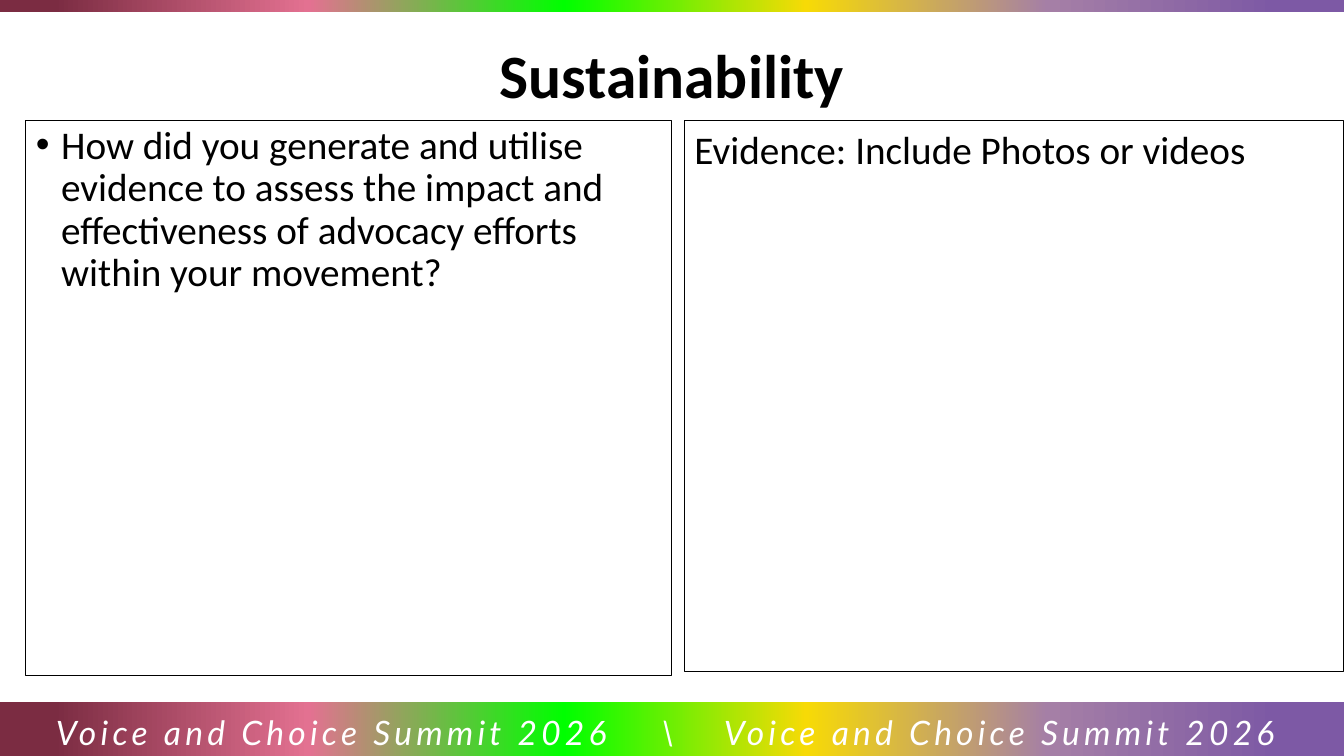
from lxml.etree import SubElement
from pptx import Presentation
from pptx.dml.color import RGBColor
from pptx.enum.shapes import MSO_SHAPE as Preset
from pptx.enum.text import MSO_ANCHOR as Anchor, MSO_AUTO_SIZE as AutoSize, PP_ALIGN as Align
from pptx.oxml.ns import qn
from pptx.util import Pt

SLIDE_W, SLIDE_H = 960, 540
RAINBOW = [(5, "7D59A5"), (22, "A57FA6"), (40, "F7DA06"),
           (58, "00FF00"), (77, "E37191"), (96, "7B2C42")]
SUMMIT = "Voice and Choice Summit 2026"


def color(hex_code):
    return RGBColor.from_string(hex_code)


def place(shape, left, top, width, height):
    shape.left, shape.top = Pt(left), Pt(top)
    shape.width, shape.height = Pt(width), Pt(height)


def add_rectangle(slide, left, top, width, height):
    rectangle = slide.shapes.add_shape(Preset.RECTANGLE, Pt(left), Pt(top), Pt(width), Pt(height))
    rectangle.shadow.inherit = False
    return rectangle


def add_rainbow_band(slide, top, height):
    band = add_rectangle(slide, 0, top, SLIDE_W, height)
    band.line.fill.background()
    band.fill.gradient()
    # Replace the two default stops, then run the colours right to left
    gradient = band.fill._xPr.find(qn("a:gradFill"))
    stops = gradient.find(qn("a:gsLst"))
    for stop in list(stops):
        stops.remove(stop)
    for position, hex_code in RAINBOW:
        stop = SubElement(stops, qn("a:gs"), pos=str(position * 1000))
        SubElement(stop, qn("a:srgbClr"), val=hex_code)
    band.fill.gradient_angle = 180


def outline(panel):
    panel.fill.background()
    panel.line.color.rgb = color("000000")
    panel.line.width = Pt(0.75)


def write(shape, text, size=28, font="Calibri", hex_code="000000", bold=False, italic=False,
          align=Align.LEFT, anchor=Anchor.TOP, line_spacing=1.0, bullet_indent=0,
          letter_spacing=0, tabs=()):
    frame = shape.text_frame
    frame.word_wrap = True
    frame.auto_size = AutoSize.NONE
    frame.vertical_anchor = anchor
    paragraph = frame.paragraphs[0]
    paragraph.text = text
    paragraph.alignment = align
    paragraph.line_spacing = line_spacing
    paragraph.space_before = Pt(0)
    properties = paragraph._p.get_or_add_pPr()
    if bullet_indent:
        properties.set("marL", str(Pt(bullet_indent)))
        properties.set("indent", str(-Pt(bullet_indent)))
        SubElement(properties, qn("a:buFont"), typeface="Arial")
        SubElement(properties, qn("a:buChar"), char="•")
    if tabs:
        tab_list = SubElement(properties, qn("a:tabLst"))
        for position in tabs:
            SubElement(tab_list, qn("a:tab"), pos=str(Pt(position)), algn="l")
    for run in paragraph.runs:
        run.font.size = Pt(size)
        run.font.name = font
        run.font.bold = bold
        run.font.italic = italic
        run.font.color.rgb = color(hex_code)
        if letter_spacing:
            run._r.get_or_add_rPr().set("spc", str(letter_spacing * 100))


def main():
    deck = Presentation()
    deck.slide_width, deck.slide_height = Pt(SLIDE_W), Pt(SLIDE_H)
    slide = deck.slides.add_slide(deck.slide_layouts[1])

    # Bands at the top and bottom edges
    add_rainbow_band(slide, 0, 8.6)
    add_rainbow_band(slide, 501.1, 41)

    # Title
    title = slide.shapes.title
    place(title, 0, 19.4, SLIDE_W, 66.2)
    write(title, "Sustainability", size=44, bold=True, align=Align.CENTER, anchor=Anchor.MIDDLE)

    # Question panel
    question = slide.placeholders[1]
    place(question, 18.5, 86, 461.5, 396.7)
    outline(question)
    write(question, "How did you generate and utilise evidence to assess the impact and "
          "effectiveness of advocacy efforts within your movement?",
          line_spacing=0.9, bullet_indent=18)

    # Evidence panel
    evidence = add_rectangle(slide, 489, 86, 470.5, 393.7)
    outline(evidence)
    write(evidence, "Evidence: Include Photos or videos")

    # Footer wording over the bottom band
    footer = slide.shapes.add_textbox(Pt(0), Pt(503.3), Pt(SLIDE_W), Pt(35.3))
    footer.text_frame.margin_left = Pt(40)
    write(footer, f"{SUMMIT}\t\\\t{SUMMIT}", size=24, font="Lato", hex_code="FFFFFF", italic=True,
          line_spacing=1.07, letter_spacing=3, tabs=(432, 477))

    deck.save("out.pptx")


if __name__ == "__main__":
    main()
